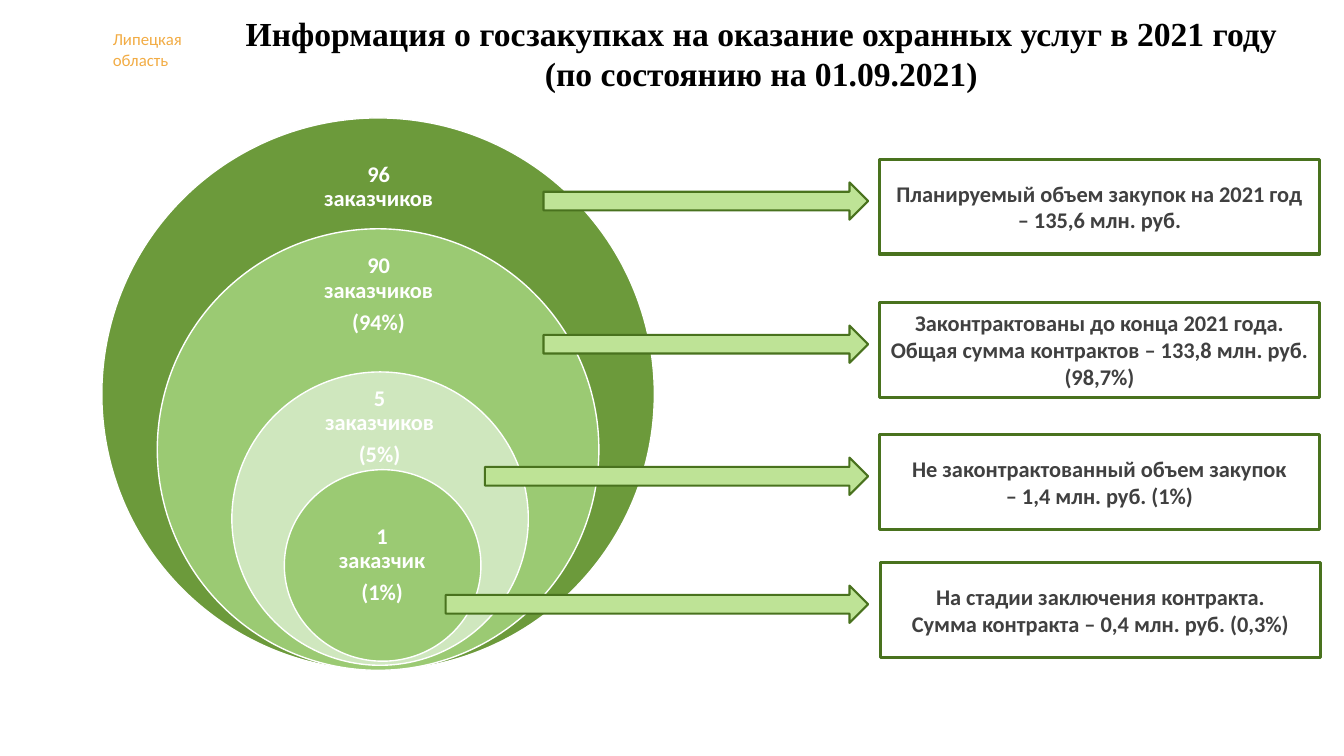
from dataclasses import dataclass

from pptx import Presentation
from pptx.dml.color import RGBColor
from pptx.enum.shapes import MSO_SHAPE
from pptx.enum.text import MSO_ANCHOR, PP_ALIGN
from pptx.util import Emu, Pt

PX = 9144  # EMU; 100 px to the inch

WHITE = RGBColor(0xFF, 0xFF, 0xFF)
BLACK = RGBColor(0x00, 0x00, 0x00)
ORANGE = RGBColor(0xF2, 0xAC, 0x44)
DEEP_GREEN = RGBColor(0x6C, 0x9A, 0x3B)
MID_GREEN = RGBColor(0x9B, 0xCA, 0x73)
PALE_GREEN = RGBColor(0xCF, 0xE7, 0xBE)
ARROW_GREEN = RGBColor(0xBE, 0xE3, 0x96)
BORDER_GREEN = RGBColor(0x49, 0x72, 0x1E)
GREY = RGBColor(0x40, 0x40, 0x40)

FACT_WIDTH, FACT_HEIGHT = 437, 94
ARROW_TIP, ARROW_HEIGHT, ARROW_DROP = 861, 37, 23


@dataclass(frozen=True)
class Box:
    left: int
    top: int
    width: int
    height: int

    def emu(self) -> list[Emu]:
        return [Emu(n * PX) for n in (self.left, self.top, self.width, self.height)]


@dataclass(frozen=True)
class Customers:
    circle: Box
    fill: RGBColor
    label: Box
    lines: list[str]


@dataclass(frozen=True)
class Fact:
    left: int
    top: int
    arrow_start: int
    lines: list[str]


CUSTOMERS = [
    Customers(Box(101, 117, 548, 548), DEEP_GREEN, Box(299, 145, 153, 82),
              ["96 заказчиков"]),
    Customers(Box(156, 227, 438, 438), MID_GREEN, Box(299, 253, 153, 79),
              ["90 заказчиков", "(94%)"]),
    Customers(Box(230, 369, 294, 291), PALE_GREEN, Box(308, 391, 137, 65),
              ["5 заказчиков", "(5%)"]),
    Customers(Box(282, 466, 195, 190), MID_GREEN, Box(310, 513, 138, 95),
              ["1\vзаказчик", "(1%)"]),
]

FACTS = [
    Fact(872, 158, 539, ["Планируемый объем закупок на 2021 год – 135,6 млн. руб."]),
    Fact(872, 300, 539, ["Законтрактованы до конца 2021 года.",
                         "Общая сумма контрактов – 133,8 млн. руб. (98,7%)"]),
    Fact(872, 431, 481, ["Не законтрактованный объем закупок",
                         "– 1,4 млн. руб. (1%)"]),
    Fact(873, 558, 442, ["На стадии заключения контракта.",
                         "Сумма контракта – 0,4 млн. руб. (0,3%)"]),
]


def write(shape, lines: list[str], *, color: RGBColor, size: float = 16,
          font: str = "Calibri", bold: bool = True, align=PP_ALIGN.CENTER,
          anchor=MSO_ANCHOR.MIDDLE, line_spacing: float | None = None,
          space_after: float = 0, inset: int | None = None) -> None:
    frame = shape.text_frame
    frame.word_wrap = True
    frame.vertical_anchor = anchor
    if inset is not None:
        frame.margin_left = frame.margin_right = Emu(inset * PX)
        frame.margin_top = frame.margin_bottom = Emu(inset * PX)
    for index, line in enumerate(lines):
        paragraph = frame.add_paragraph() if index else frame.paragraphs[0]
        paragraph.text = line
        paragraph.alignment = align
        paragraph.line_spacing = line_spacing
        paragraph.space_after = Pt(space_after)
        paragraph.font.name = font
        paragraph.font.size = Pt(size)
        paragraph.font.bold = bold
        paragraph.font.color.rgb = color


def add_outlined(slide, preset: MSO_SHAPE, box: Box, fill: RGBColor,
                 border: RGBColor, border_width: float):
    shape = slide.shapes.add_shape(preset, *box.emu())
    shape.shadow.inherit = False
    shape.fill.solid()
    shape.fill.fore_color.rgb = fill
    shape.line.color.rgb = border
    shape.line.width = Pt(border_width)
    return shape


def add_customers(slide, customers: Customers) -> None:
    add_outlined(slide, MSO_SHAPE.OVAL, customers.circle, customers.fill, WHITE, 1)
    label = slide.shapes.add_textbox(*customers.label.emu())
    write(label, customers.lines, color=WHITE, line_spacing=0.9,
          space_after=5.6, inset=12)


def add_fact(slide, fact: Fact) -> None:
    """Draw a fact's frame and the arrow that leads to it."""
    arrow = Box(fact.arrow_start, fact.top + ARROW_DROP,
                ARROW_TIP - fact.arrow_start, ARROW_HEIGHT)
    add_outlined(slide, MSO_SHAPE.RIGHT_ARROW, arrow, ARROW_GREEN, BORDER_GREEN, 1.5)
    frame = add_outlined(slide, MSO_SHAPE.RECTANGLE,
                         Box(fact.left, fact.top, FACT_WIDTH, FACT_HEIGHT),
                         WHITE, BORDER_GREEN, 2.25)
    write(frame, fact.lines, color=GREY)


def main() -> None:
    presentation = Presentation()
    presentation.slide_width = Emu(1333 * PX)
    presentation.slide_height = Emu(750 * PX)
    slide = presentation.slides.add_slide(presentation.slide_layouts[6])

    region = slide.shapes.add_textbox(*Box(102, 24, 91, 50).emu())
    write(region, ["Липецкая", "область"], color=ORANGE, size=12, bold=False,
          align=PP_ALIGN.LEFT, anchor=MSO_ANCHOR.TOP)
    title = slide.shapes.add_textbox(*Box(201, 8, 1108, 91).emu())
    write(title, ["Информация о госзакупках на оказание охранных услуг в 2021 году",
                  "(по состоянию на 01.09.2021)"],
          color=BLACK, size=24, font="Times New Roman", anchor=MSO_ANCHOR.TOP)

    for customers in CUSTOMERS:
        add_customers(slide, customers)
    for fact in FACTS:
        add_fact(slide, fact)

    presentation.save("out.pptx")


if __name__ == "__main__":
    main()
